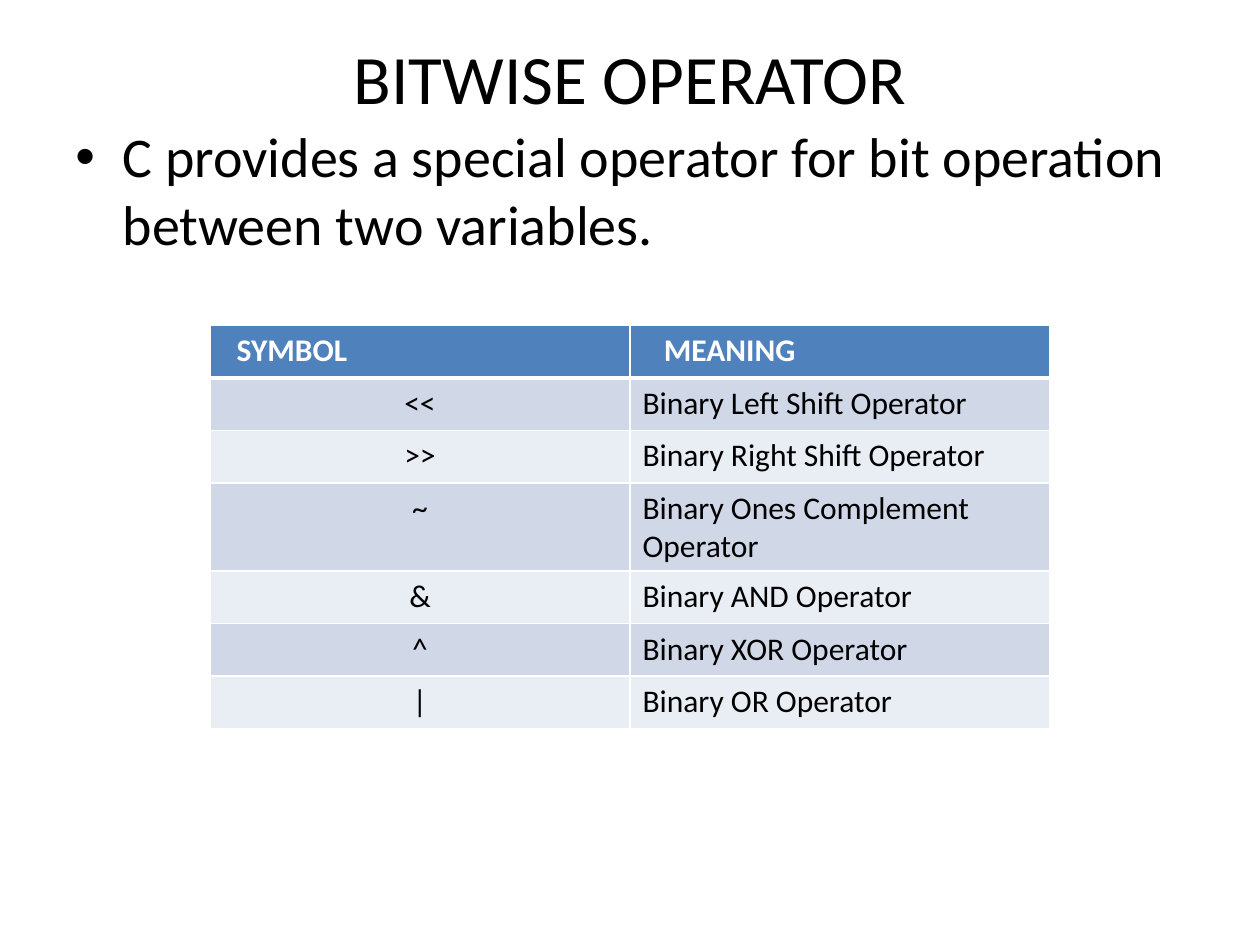
import pptx
import pptx.dml.color
import pptx.enum.text
import pptx.oxml
import pptx.oxml.ns
import pptx.util

Pt = pptx.util.Pt
Align = pptx.enum.text.PP_ALIGN
Anchor = pptx.enum.text.MSO_ANCHOR
SPACE = pptx.oxml.ns.nsdecls("a")
HEADS = [("SYMBOL", 15.3), ("MEANING", 19.4)]
ROWS = [
    ("<<", "Binary Left Shift Operator"),
    (">>", "Binary Right Shift Operator"),
    ("~", "Binary Ones Complement Operator"),
    ("&", "Binary AND Operator"),
    ("^", "Binary XOR Operator"),
    ("|", "Binary OR Operator"),
]


def color(code):
    return pptx.dml.color.RGBColor.from_string(code)


def write(frame, text, size, align=Align.LEFT, code="000000", bold=False):
    para = frame.paragraphs[0]
    para.text = text
    para.alignment = align
    para.font.name = "Calibri"
    para.font.size = Pt(size)
    para.font.bold = bold
    para.font.color.rgb = color(code)
    return para


def add_text(slide, box, text, size, align, anchor):
    frame = slide.shapes.add_textbox(*map(Pt, box)).text_frame
    frame.word_wrap = True
    frame.vertical_anchor = anchor
    return write(frame, text, size, align)


def add_bullet(para, indent):
    props = para._p.get_or_add_pPr()
    props.set("marL", str(Pt(indent)))
    props.set("indent", str(-Pt(indent)))
    for mark in ('<a:buFont {} typeface="Arial"/>', '<a:buChar {} char="•"/>'):
        props.append(pptx.oxml.parse_xml(mark.format(SPACE)))


def add_lines(cell, top, bottom):
    props = cell._tc.get_or_add_tcPr()
    for side, width in zip("LRTB", (1, 1, top, bottom)):
        props.append(pptx.oxml.parse_xml(
            f'<a:ln{side} {SPACE} w="{Pt(width)}"><a:solidFill>'
            f'<a:srgbClr val="FFFFFF"/></a:solidFill></a:ln{side}>'))


def paint(cell, code, top=1, bottom=1):
    add_lines(cell, top, bottom)
    cell.fill.solid()
    cell.fill.fore_color.rgb = color(code)


def add_table(slide, left, top, width, height):
    count = len(ROWS) + 1
    table = slide.shapes.add_table(
        count, 2, Pt(left), Pt(top), Pt(width), Pt(height * count)).table
    for col, (text, margin) in enumerate(HEADS):
        cell = table.cell(0, col)
        paint(cell, "4F81BD", bottom=3)
        cell.margin_left = Pt(margin)
        write(cell.text_frame, text, 18, code="FFFFFF", bold=True)
    for row, texts in enumerate(ROWS, 1):
        for col, text in enumerate(texts):
            cell = table.cell(row, col)
            paint(cell, "D0D8E8" if row % 2 else "E9EDF4",
                  top=3 if row == 1 else 1)
            write(cell.text_frame, text, 18,
                  Align.LEFT if col else Align.CENTER)


def main():
    deck = pptx.Presentation()
    deck.slide_width, deck.slide_height = Pt(720), Pt(540)
    slide = deck.slides.add_slide(deck.slide_layouts[6])
    add_text(slide, (36, 21.6, 648, 44.6), "BITWISE OPERATOR", 39.6,
             Align.CENTER, Anchor.MIDDLE)
    body = add_text(
        slide, (36, 66.2, 648, 416),
        "C provides a special operator for bit operation between two variables.",
        32, Align.LEFT, Anchor.TOP)
    body.space_before = Pt(6.4)
    add_bullet(body, 27)
    add_table(slide, 120, 186, 480, 30)
    deck.save("out.pptx")


if __name__ == "__main__":
    main()
